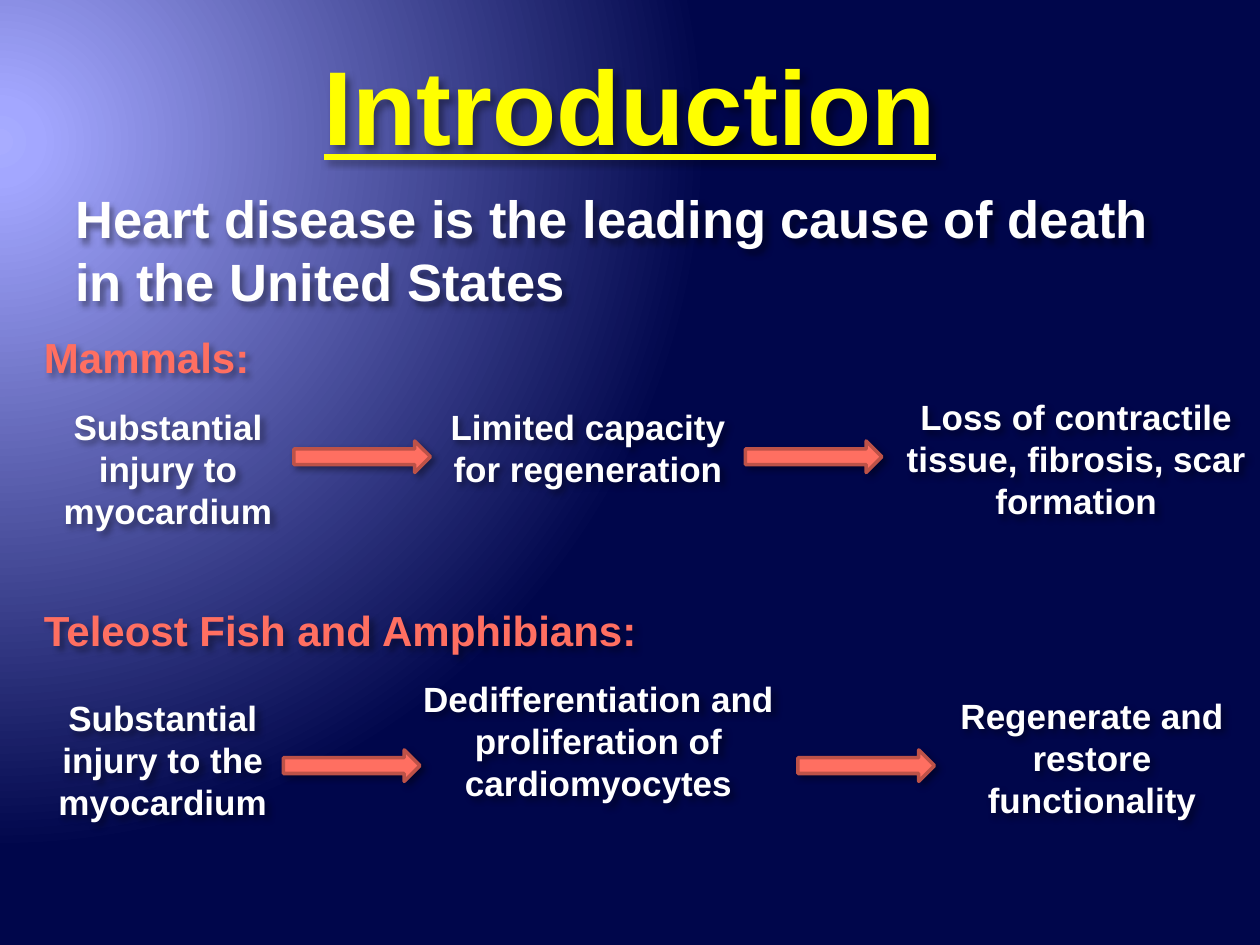
from pptx import Presentation
from pptx.dml.color import RGBColor
from pptx.enum.shapes import MSO_SHAPE
from pptx.enum.text import MSO_ANCHOR, PP_ALIGN
from pptx.oxml import parse_xml
from pptx.oxml.ns import nsdecls, qn
from pptx.util import Pt

COLORS = {
    "title": "FFFF00",
    "text": "FFFFFF",
    "coral": "FF6F61",
    "edge": "BD5248",
    "shade": "000000",
}
GLOW = [(0, "A8ACFF"), (5, "A3A7FF"), (90, "00064B"), (100, "00064B")]


class Deck:
    font = "Arial"

    def __init__(self, prs):
        self.slide = prs.slides.add_slide(prs.slide_layouts[6])

    def color(self, name):
        return RGBColor.from_string(COLORS[name])

    def glow(self):
        """Fill the background with a round gradient from the upper left."""
        self.slide.background.fill.solid()
        stops = "".join(
            f'<a:gs pos="{pos * 1000}"><a:srgbClr val="{tone}"/></a:gs>'
            for pos, tone in GLOW
        )
        grad = parse_xml(
            f'<a:gradFill {nsdecls("a")} rotWithShape="1"><a:gsLst>{stops}</a:gsLst>'
            '<a:path path="circle"><a:fillToRect l="20000" t="30000"'
            ' r="135000" b="100000"/></a:path></a:gradFill>'
        )
        back = next(self.slide.element.iter(qn("p:bgPr")))
        back.replace(back[0], grad)

    def shade(self, shape):
        """Give a shape, or the text of an unfilled box, a soft shadow."""
        shape.shadow.inherit = False
        effect = next(shape.element.iter(qn("a:effectLst")))
        effect.append(parse_xml(
            f'<a:outerShdw {nsdecls("a")} blurRad="{Pt(4)}" dist="{Pt(3)}"'
            ' dir="2700000" algn="tl" rotWithShape="0">'
            f'<a:srgbClr val="{COLORS["shade"]}"><a:alpha val="40000"/></a:srgbClr>'
            '</a:outerShdw>'
        ))

    def text(self, box, lines, size, tone="text", align=PP_ALIGN.LEFT, under=False):
        shape = self.slide.shapes.add_textbox(*map(Pt, box))
        frame = shape.text_frame
        frame.word_wrap = True
        frame.vertical_anchor = MSO_ANCHOR.TOP
        frame.margin_top = Pt(3.6 + size * 0.03)
        for i, line in enumerate(lines):
            para = frame.add_paragraph() if i else frame.paragraphs[0]
            para.alignment = align
            para.line_spacing = Pt(size * 1.2)
            run = para.add_run()
            run.text = line
            font = run.font
            font.name, font.size, font.bold = self.font, Pt(size), True
            font.underline = under
            font.color.rgb = self.color(tone)
        self.shade(shape)

    def head(self, top, width, line):
        self.text((18, top, width, 36), [line], 24, "coral")

    def step(self, box, *lines):
        self.text(box, lines, 20, align=PP_ALIGN.CENTER)

    def arrow(self, left, top):
        shape = self.slide.shapes.add_shape(
            MSO_SHAPE.RIGHT_ARROW, Pt(left), Pt(top), Pt(78), Pt(18))
        shape.fill.solid()
        shape.fill.fore_color.rgb = self.color("coral")
        shape.line.color.rgb = self.color("edge")
        shape.line.width = Pt(2)
        self.shade(shape)


def main():
    prs = Presentation()
    prs.slide_width, prs.slide_height = Pt(720), Pt(540)
    deck = Deck(prs)
    deck.glow()
    deck.text((120, 18, 480, 72), ["Introduction"], 60, "title",
              PP_ALIGN.CENTER, under=True)
    deck.text((36, 102, 648, 90),
              ["Heart disease is the leading cause of death in the United States"], 30)

    deck.head(185, 162, "Mammals:")
    deck.step((12, 227.5, 168, 80), "Substantial injury to myocardium")
    deck.step((240, 227.5, 192, 56), "Limited capacity for regeneration")
    deck.step((510, 222, 210, 80),
              "Loss of contractile tissue, fibrosis, scar formation")

    deck.head(341, 378, "Teleost Fish and Amphibians:")
    deck.step((12, 394, 162, 80), "Substantial injury to the myocardium")
    deck.step((234, 383, 216, 80),
              "Dedifferentiation and", "proliferation of cardiomyocytes")
    deck.step((528, 392.5, 192, 80), "Regenerate and restore functionality")

    for top, lefts in ((252, (168, 426)), (428.5, (162, 456))):
        for left in lefts:
            deck.arrow(left, top)
    prs.save("out.pptx")


if __name__ == "__main__":
    main()
